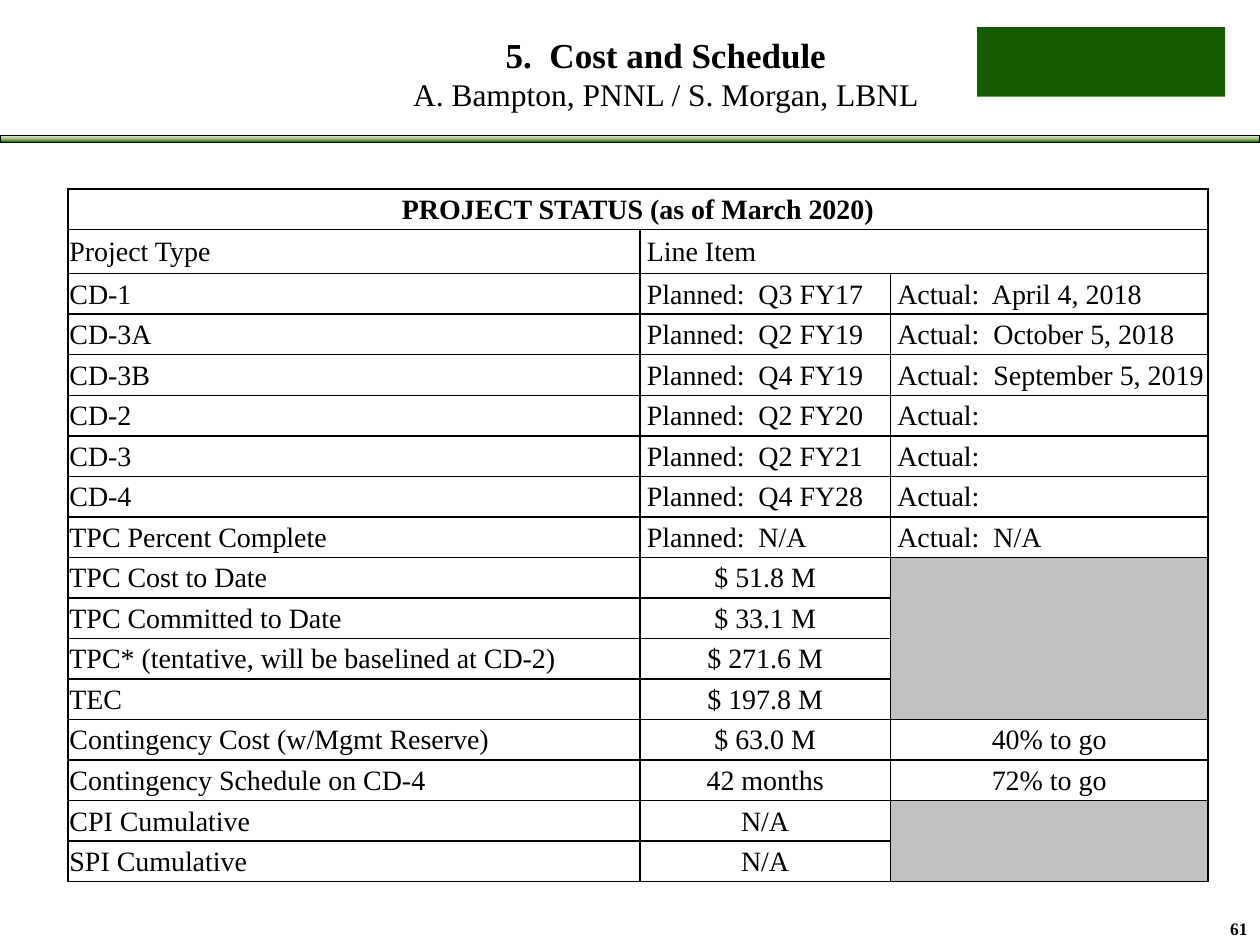
from copy import deepcopy
from dataclasses import dataclass

from lxml.etree import SubElement
from pptx import Presentation
from pptx.dml.color import RGBColor
from pptx.enum.shapes import MSO_SHAPE
from pptx.enum.text import MSO_ANCHOR, MSO_AUTO_SIZE, PP_ALIGN as Align
from pptx.oxml.ns import qn
from pptx.util import Cm, Pt


@dataclass(frozen=True)
class Theme:
    black: str = "000000"
    green: str = "135C00"
    gray: str = "C0C0C0"
    rule_stops: tuple = ((0, "DDEBCF"), (0.5, "9CB86E"), (1, "156B13"))
    serif: str = "Times New Roman"
    title: int = 20
    subtitle: int = 18
    body: int = 16
    footer: int = 10


THEME = Theme()

# Label, then the second and third columns; None leaves a cell to a merge.
STATUS_ROWS = [
    ("PROJECT STATUS (as of March 2020)", None, None),
    ("Project Type", "Line Item", None),
    ("CD-1", "Planned:  Q3 FY17", "Actual:  April 4, 2018"),
    ("CD-3A", "Planned:  Q2 FY19", "Actual:  October 5, 2018"),
    ("CD-3B", "Planned:  Q4 FY19", "Actual:  September 5, 2019"),
    ("CD-2", "Planned:  Q2 FY20", "Actual:"),
    ("CD-3", "Planned:  Q2 FY21", "Actual:"),
    ("CD-4", "Planned:  Q4 FY28", "Actual:"),
    ("TPC Percent Complete", "Planned:  N/A", "Actual:  N/A"),
    ("TPC Cost to Date", "$ 51.8 M", None),
    ("TPC Committed to Date", "$ 33.1 M", None),
    ("TPC* (tentative, will be baselined at CD-2)", "$ 271.6 M", None),
    ("TEC", "$ 197.8 M", None),
    ("Contingency Cost (w/Mgmt Reserve)", "$ 63.0 M", "40% to go"),
    ("Contingency Schedule on CD-4", "42 months", "72% to go"),
    ("CPI Cumulative", "N/A", None),
    ("SPI Cumulative", "N/A", None),
]
FIRST_VALUE_ROW = 9
HEADING_SPANS = [((0, 0), (0, 2)), ((1, 1), (1, 2))]
GRAY_SPANS = [((9, 2), (12, 2)), ((15, 2), (16, 2))]
COLUMN_WIDTHS = (11.53, 5.05, 6.4)
TABLE_HEIGHT = 13.97
TYPE_ROW_HEIGHT = 0.89


def rgb(color):
    return RGBColor.from_string(color)


def add_text(paragraph, text, size=THEME.body, font=THEME.serif,
             color=THEME.black, bold=False, align=None):
    run = paragraph.add_run()
    run.text = text
    run.font.size = Pt(size)
    run.font.name = font
    run.font.bold = bold
    run.font.color.rgb = rgb(color)
    if align is not None:
        paragraph.alignment = align


def add_rectangle(slide, left, top, width, height):
    rectangle = slide.shapes.add_shape(MSO_SHAPE.RECTANGLE, Cm(left), Cm(top),
                                       Cm(width), Cm(height))
    rectangle.shadow.inherit = False
    return rectangle


def add_gradient_rule(slide):
    rule = add_rectangle(slide, 0, 2.74, 25.4, 0.13)
    rule.line.color.rgb = rgb(THEME.black)
    rule.line.width = Pt(0.5)
    rule.fill.gradient()
    rule.fill.gradient_angle = 270
    stop_list = rule.element.spPr.find(".//" + qn("a:gsLst"))
    stop_list.append(deepcopy(stop_list[-1]))
    for stop, (position, color) in zip(rule.fill.gradient_stops, THEME.rule_stops):
        stop.position = position
        stop.color.rgb = rgb(color)


def add_corner_block(slide):
    block = add_rectangle(slide, 19.7, 0.55, 5, 1.4)
    block.fill.solid()
    block.fill.fore_color.rgb = rgb(THEME.green)
    block.line.fill.background()


def fill_title(slide):
    title = slide.shapes.title
    title.left, title.top = Cm(7.01), Cm(0.32)
    title.width, title.height = Cm(12.83), Cm(2.31)
    frame = title.text_frame
    frame.auto_size = MSO_AUTO_SIZE.NONE
    frame.vertical_anchor = MSO_ANCHOR.MIDDLE
    paragraph = frame.paragraphs[0]
    add_text(paragraph, "5.  Cost and Schedule", size=THEME.title, bold=True,
             align=Align.CENTER)
    paragraph.add_line_break()
    add_text(paragraph, "A. Bampton, PNNL / S. Morgan, LBNL", size=THEME.subtitle)


def format_cell(cell, left_margin):
    cell.vertical_anchor = MSO_ANCHOR.MIDDLE
    cell.margin_left = Cm(left_margin)
    cell.margin_right = cell.margin_top = Cm(0.03)
    cell.margin_bottom = 0
    properties = cell._tc.get_or_add_tcPr()
    for side in ("lnL", "lnR", "lnT", "lnB"):
        line = SubElement(properties, qn(f"a:{side}"), w=str(Pt(1)))
        fill = SubElement(line, qn("a:solidFill"))
        SubElement(fill, qn("a:srgbClr"), val=THEME.black)
    cell.fill.background()


def add_status_table(slide):
    row_count = len(STATUS_ROWS)
    frame = slide.shapes.add_table(row_count, len(COLUMN_WIDTHS), Cm(1.37), Cm(3.81),
                                   Cm(sum(COLUMN_WIDTHS)), Cm(TABLE_HEIGHT))
    table = frame.table
    table.first_row = table.horz_banding = False
    for column, width in zip(table.columns, COLUMN_WIDTHS):
        column.width = Cm(width)
    for row in table.rows:
        row.height = Cm((TABLE_HEIGHT - TYPE_ROW_HEIGHT) / (row_count - 1))
    table.rows[1].height = Cm(TYPE_ROW_HEIGHT)

    for row_index, texts in enumerate(STATUS_ROWS):
        is_heading = row_index == 0
        for column_index, text in enumerate(texts):
            is_value = column_index > 0 and row_index >= FIRST_VALUE_ROW
            is_indented = column_index > 0 and not is_value
            cell = table.cell(row_index, column_index)
            format_cell(cell, left_margin=0.14 if is_indented else 0.03)
            if text:
                add_text(cell.text_frame.paragraphs[0], text, bold=is_heading,
                         align=Align.CENTER if is_heading or is_value else Align.LEFT)
            else:
                cell.text_frame.paragraphs[0].font.size = Pt(THEME.body)

    for first, last in HEADING_SPANS + GRAY_SPANS:
        table.cell(*first).merge(table.cell(*last))
    for first, _ in GRAY_SPANS:
        fill = table.cell(*first).fill
        fill.solid()
        fill.fore_color.rgb = rgb(THEME.gray)


def add_page_number(slide):
    box = slide.shapes.add_textbox(Cm(24.36), Cm(18.39), Cm(1.04), Cm(0.66))
    box.text_frame.word_wrap = True
    add_text(box.text_frame.paragraphs[0], "61", size=THEME.footer, bold=True,
             align=Align.RIGHT)


def main():
    presentation = Presentation()
    presentation.slide_width, presentation.slide_height = Cm(25.4), Cm(19.05)
    slide = presentation.slides.add_slide(presentation.slide_layouts[5])
    add_gradient_rule(slide)
    add_corner_block(slide)
    add_page_number(slide)
    fill_title(slide)
    add_status_table(slide)
    presentation.save("out.pptx")


if __name__ == "__main__":
    main()
